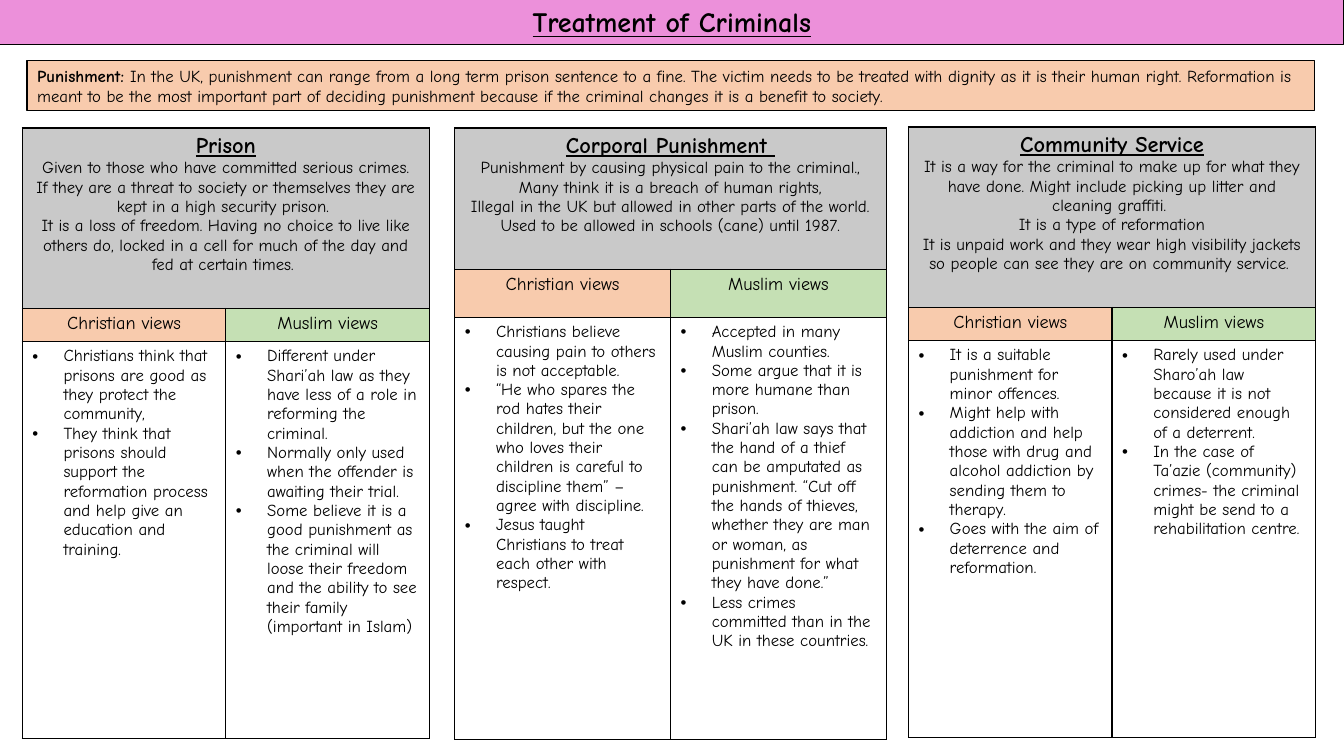
from lxml.etree import SubElement
from pptx import Presentation
from pptx.dml.color import RGBColor
from pptx.enum.shapes import MSO_SHAPE
from pptx.enum.text import MSO_ANCHOR, PP_ALIGN
from pptx.oxml.ns import qn
from pptx.util import Inches, Pt

FONT = "Comic Neue"
BLACK, WHITE, GREY = "000000", "FFFFFF", "C9C9C9"
PINK, PEACH, GREEN = "EC90DA", "F8CBAD", "C5E0B4"
INDENT = Inches(0.31)

TITLE = "Treatment of Criminals"
TERM = "Punishment: "
MEANING = (
    "In the UK, punishment can range from a long term prison sentence to a fine. "
    "The victim needs to be treated with dignity as it is their human right. "
    "Reformation is meant to be the most important part of deciding punishment "
    "because if the criminal changes it is a benefit to society."
)

# Each topic: box, row heights, heading, facts, Christian views, Muslim views
TOPICS = [
    (
        (0.22, 1.27, 4.04), (1.79, 0.33, 3.94), "Prison",
        [
            "Given to those who have committed serious crimes.",
            "If they are a threat to society or themselves they are kept in a "
            "high security prison. ",
            "It is a loss of freedom. Having no choice to live like others do, "
            "locked in a cell for much of the day and fed at certain times. ",
        ],
        [
            "Christians think that prisons are good as they protect the community,",
            "They think that prisons should support the reformation process and "
            "help give an education and training.",
        ],
        [
            "Different under Shari’ah law as they have less of a role in reforming "
            "the criminal.",
            "Normally only used when the offender is awaiting their trial.",
            "Some believe it is a good punishment as the criminal will loose their "
            "freedom and the ability to see their family (important in Islam)",
        ],
    ),
    (
        (4.51, 1.27, 4.28), (1.4, 0.48, 4.19), "Corporal Punishment ",
        [
            "Punishment by causing physical pain to the criminal.,",
            "Many think it is a breach of human rights,",
            "Illegal in the UK but allowed in other parts of the world.",
            "Used to be allowed in schools (cane) until 1987.",
        ],
        [
            "Christians believe causing pain to others is not acceptable.",
            "“He who spares the rod hates their children, but the one who loves "
            "their children is careful to discipline them” – agree with discipline.",
            "Jesus taught Christians to treat each other with respect.",
        ],
        [
            "Accepted in many Muslim counties.",
            "Some argue that it is more humane than prison.",
            "Shari’ah law says that the hand of a thief can be amputated as "
            "punishment. “Cut off the hands of thieves, whether they are man or "
            "woman, as punishment for what they have done.”",
            "Less crimes committed than in the UK in these countries.",
        ],
    ),
    (
        (9.01, 1.26, 4.04), (1.79, 0.33, 3.94), "Community Service",
        [
            "It is a way for the criminal to make up for what they have done. "
            "Might include picking up litter and cleaning graffiti. ",
            "It is a type of reformation",
            "It is unpaid work and they wear high visibility jackets so people "
            "can see they are on community service. ",
        ],
        [
            "It is a suitable punishment for minor offences.",
            "Might help with addiction and help those with drug and alcohol "
            "addiction by sending them to therapy.",
            "Goes with the aim of deterrence and reformation.",
        ],
        [
            "Rarely used under Sharo’ah law because it is not considered enough "
            "of a deterrent.",
            "In the case of Ta’azie (community) crimes- the criminal might be "
            "send to a rehabilitation centre.",
        ],
    ),
]


def paint(fill, color):
    fill.solid()
    fill.fore_color.rgb = RGBColor.from_string(color)


def add_run(para, text, size, bold=False, under=False):
    run = para.add_run()
    run.text = text
    font = run.font
    font.name, font.size, font.bold, font.underline = FONT, Pt(size), bold, under
    font.color.rgb = RGBColor.from_string(BLACK)


def add_paras(frame, lines, align=PP_ALIGN.LEFT, bullet=False):
    """Write one paragraph per line; a line is (text, size, bold, underline)."""
    for i, line in enumerate(lines):
        para = frame.add_paragraph() if i else frame.paragraphs[0]
        para.alignment = align
        add_run(para, *line)
        if bullet:
            props = para._p.get_or_add_pPr()
            props.set("marL", str(INDENT))
            props.set("indent", str(-INDENT))
            SubElement(props, qn("a:buFont"), typeface="Arial")
            SubElement(props, qn("a:buChar"), char="•")


def add_bar(slide, box, color, width, anchor):
    bar = slide.shapes.add_shape(MSO_SHAPE.RECTANGLE, *map(Inches, box))
    bar.shadow.inherit = False
    paint(bar.fill, color)
    paint(bar.line.fill, BLACK)
    bar.line.width = Pt(width)
    frame = bar.text_frame
    frame.word_wrap = True
    frame.vertical_anchor = anchor
    return frame.paragraphs[0]


def add_title(slide, box):
    para = add_bar(slide, box, PINK, 0.75, MSO_ANCHOR.TOP)
    para.alignment = PP_ALIGN.CENTER
    add_run(para, TITLE, 20, True, True)


def add_meaning(slide, box):
    para = add_bar(slide, box, PEACH, 1, MSO_ANCHOR.MIDDLE)
    para.alignment = PP_ALIGN.LEFT
    add_run(para, TERM, 12, True)
    add_run(para, MEANING, 12)


def style_cell(cell, color):
    """Give the cell thin black borders and a fill."""
    props = cell._tc.get_or_add_tcPr()
    for side in ("lnL", "lnR", "lnT", "lnB"):
        edge = SubElement(props, qn(f"a:{side}"), w=str(Pt(1)))
        fill = SubElement(edge, qn("a:solidFill"))
        SubElement(fill, qn("a:srgbClr"), val=BLACK)
    paint(cell.fill, color)


def add_topic(slide, box, rows, head, facts, *views):
    left, top, width = box
    frame = slide.shapes.add_table(3, 2, *map(Inches, (left, top, width, sum(rows))))
    table = frame.table
    table.first_row = table.horz_banding = False
    for row, height in zip(table.rows, rows):
        row.height = Inches(height)
    for col in table.columns:
        col.width = Inches(width / 2)

    fills = ((GREY, GREY), (PEACH, GREEN), (WHITE, WHITE))
    for r, pair in enumerate(fills):
        for c, color in enumerate(pair):
            style_cell(table.cell(r, c), color)

    top_cell = table.cell(0, 0)
    top_cell.merge(table.cell(0, 1))
    lines = [(head, 16, True, True)] + [(fact, 12) for fact in facts]
    add_paras(top_cell.text_frame, lines, PP_ALIGN.CENTER)
    for c, (faith, points) in enumerate(zip(("Christian", "Muslim"), views)):
        label = [(f"{faith} views", 13)]
        add_paras(table.cell(1, c).text_frame, label, PP_ALIGN.CENTER)
        lines = [(point, 12) for point in points]
        add_paras(table.cell(2, c).text_frame, lines, bullet=True)


def main():
    deck = Presentation()
    deck.slide_width, deck.slide_height = Inches(13.33), Inches(7.5)
    slide = deck.slides.add_slide(deck.slide_layouts[6])
    add_title(slide, (0, 0, 13.33, 0.44))
    add_meaning(slide, (0.27, 0.6, 12.77, 0.5))
    for topic in TOPICS:
        add_topic(slide, *topic)
    deck.save("out.pptx")


if __name__ == "__main__":
    main()
